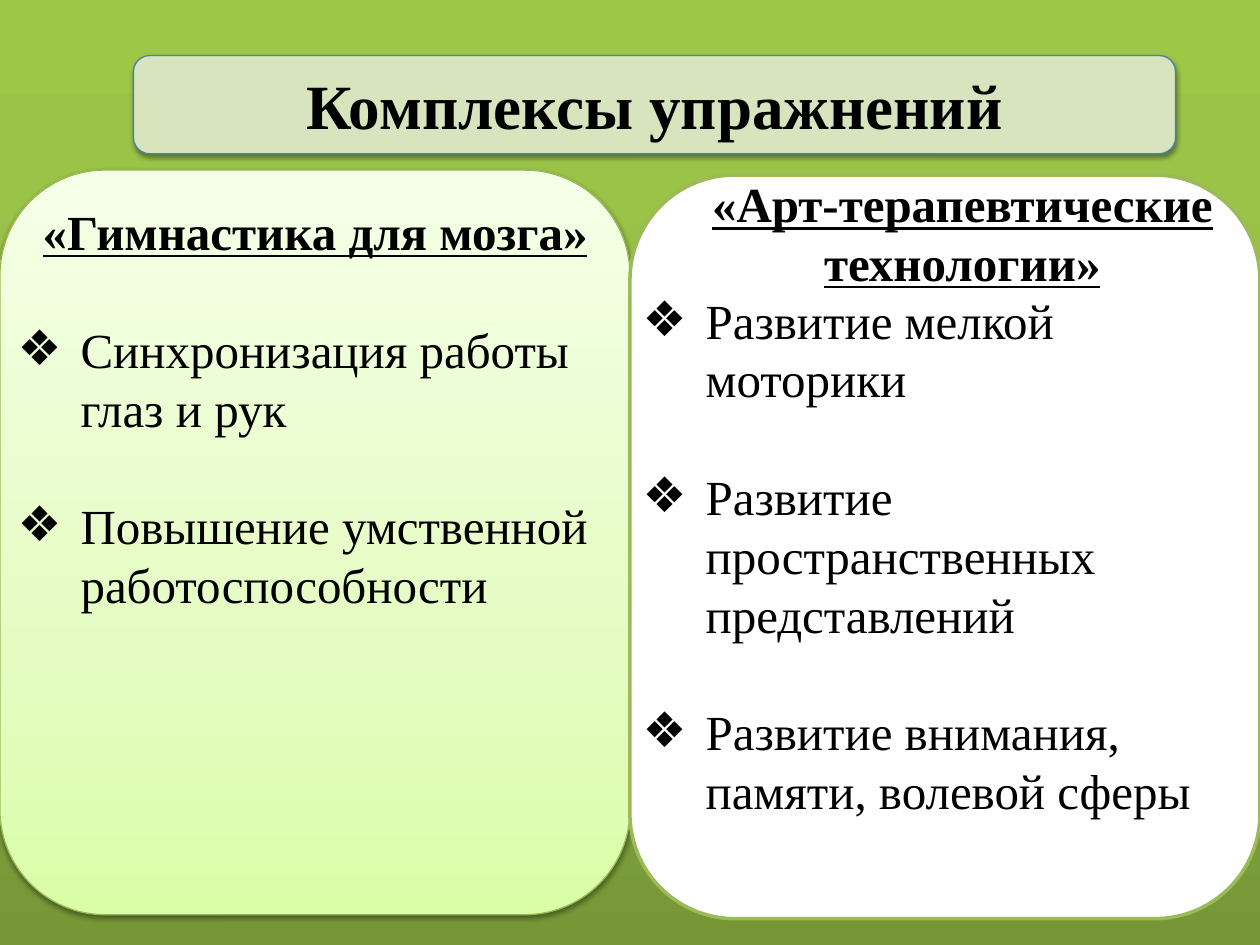
"""Build the slide that compares two sets of exercises."""
from lxml.etree import SubElement
from pptx import Presentation
from pptx.dml.color import RGBColor
from pptx.enum.shapes import MSO_SHAPE
from pptx.enum.text import MSO_ANCHOR, MSO_AUTO_SIZE, PP_ALIGN
from pptx.oxml import parse_xml
from pptx.oxml.ns import nsdecls, qn
from pptx.util import Cm, Pt


def add_panel(kind, box, stops, line=None, width=0.75, shadow=0):
    panel = slide.shapes.add_shape(kind, *map(Cm, box))
    panel.shadow.inherit = False
    properties = panel._element.spPr
    if len(stops) == 1:
        panel.fill.solid()
        panel.fill.fore_color.rgb = RGBColor.from_string(stops[0][1])
    else:
        marks = "".join(
            f'<a:gs pos="{position * 1000}"><a:srgbClr val="{colour}"/></a:gs>'
            for position, colour in stops)
        properties.find(qn("a:prstGeom")).addnext(parse_xml(
            f'<a:gradFill {nsdecls("a")}><a:gsLst>{marks}</a:gsLst>'
            '<a:lin ang="16200000" scaled="0"/></a:gradFill>'))
    if line:
        panel.line.color.rgb = RGBColor.from_string(line)
        panel.line.width = Pt(width)
    else:
        panel.line.fill.background()
    if shadow:
        properties.find(qn("a:effectLst")).append(parse_xml(
            f'<a:outerShdw {nsdecls("a")} blurRad="{Pt(3.1)}" dist="{Pt(1.6)}" '
            'dir="5400000" rotWithShape="0"><a:srgbClr val="000000">'
            f'<a:alpha val="{shadow * 1000}"/></a:srgbClr></a:outerShdw>'))


def write(paragraph, text, size=28, heading=False, underline=False, gap=0):
    run = paragraph.add_run()
    run.text = text
    run.font.name = "Times New Roman"
    run.font.size = Pt(size)
    run.font.bold = heading
    run.font.underline = underline
    run.font.color.rgb = RGBColor.from_string("000000")
    paragraph.alignment = PP_ALIGN.CENTER if heading else PP_ALIGN.LEFT
    paragraph.space_before = Pt(gap)
    properties = paragraph._p.get_or_add_pPr()
    properties.set("marL", str(0 if heading else Cm(1.27)))
    properties.set("indent", str(0 if heading else -Cm(1.27)))
    if heading:
        SubElement(properties, qn("a:buNone"))
    else:
        SubElement(properties, qn("a:buChar")).set("char", "❖")


presentation = Presentation()
presentation.slide_width, presentation.slide_height = Cm(25.4), Cm(19.05)
slide = presentation.slides.add_slide(presentation.slide_layouts[3])
title, gymnastics, art_therapy = slide.placeholders

add_panel(MSO_SHAPE.RECTANGLE, (0, 0, 25.4, 19.05),
          [(0, "779737"), (80, "9BC348"), (100, "9DC746")], shadow=35)
add_panel(MSO_SHAPE.ROUNDED_RECTANGLE, (0, 3.43, 12.7, 15.01),
          [(0, "DAFDA7"), (35, "E4FCC2"), (100, "F5FFE7")], "98B955", shadow=38)
add_panel(MSO_SHAPE.ROUNDED_RECTANGLE, (12.7, 3.53, 12.7, 14.99),
          [(0, "FFFFFF")], "9BBB59", width=2)
add_panel(MSO_SHAPE.ROUNDED_RECTANGLE, (2.69, 1.12, 21.01, 1.98),
          [(0, "D7E4BD")], "4B7EBC", shadow=38)

art_heading = slide.shapes.add_textbox(0, 0, 0, 0)
for area, box in [
    (title, (2.69, 1.12, 21.01, 1.98)),
    (gymnastics, (0.1, 3.94, 12.5, 8.64)),
    (art_heading, (12.9, 3.38, 13, 2.64)),
    (art_therapy, (12.7, 5.72, 12.7, 11.02)),
]:
    area.left, area.top, area.width, area.height = map(Cm, box)
    area.text_frame.word_wrap = True
    area.text_frame.auto_size = MSO_AUTO_SIZE.NONE
    area.text_frame.vertical_anchor = MSO_ANCHOR.MIDDLE if area is title else MSO_ANCHOR.TOP
    slide.shapes._spTree.append(area._element)

for area, text, size, underline in [
    (title, "Комплексы упражнений", 36, False),
    (gymnastics, "«Гимнастика для мозга»", 28, True),
    (art_heading, "«Арт-терапевтические технологии»", 28, True),
]:
    write(area.text_frame.paragraphs[0], text, size, heading=True, underline=underline)

for goal in ["Синхронизация работы глаз и рук", "Повышение умственной работоспособности"]:
    write(gymnastics.text_frame.add_paragraph(), goal, gap=33.5)

first_goal, *other_goals = [
    "Развитие мелкой моторики",
    "Развитие пространственных представлений",
    "Развитие внимания, памяти, волевой сферы",
]
write(art_therapy.text_frame.paragraphs[0], first_goal)
for goal in other_goals:
    write(art_therapy.text_frame.add_paragraph(), goal, gap=33.5)

presentation.save("out.pptx")
